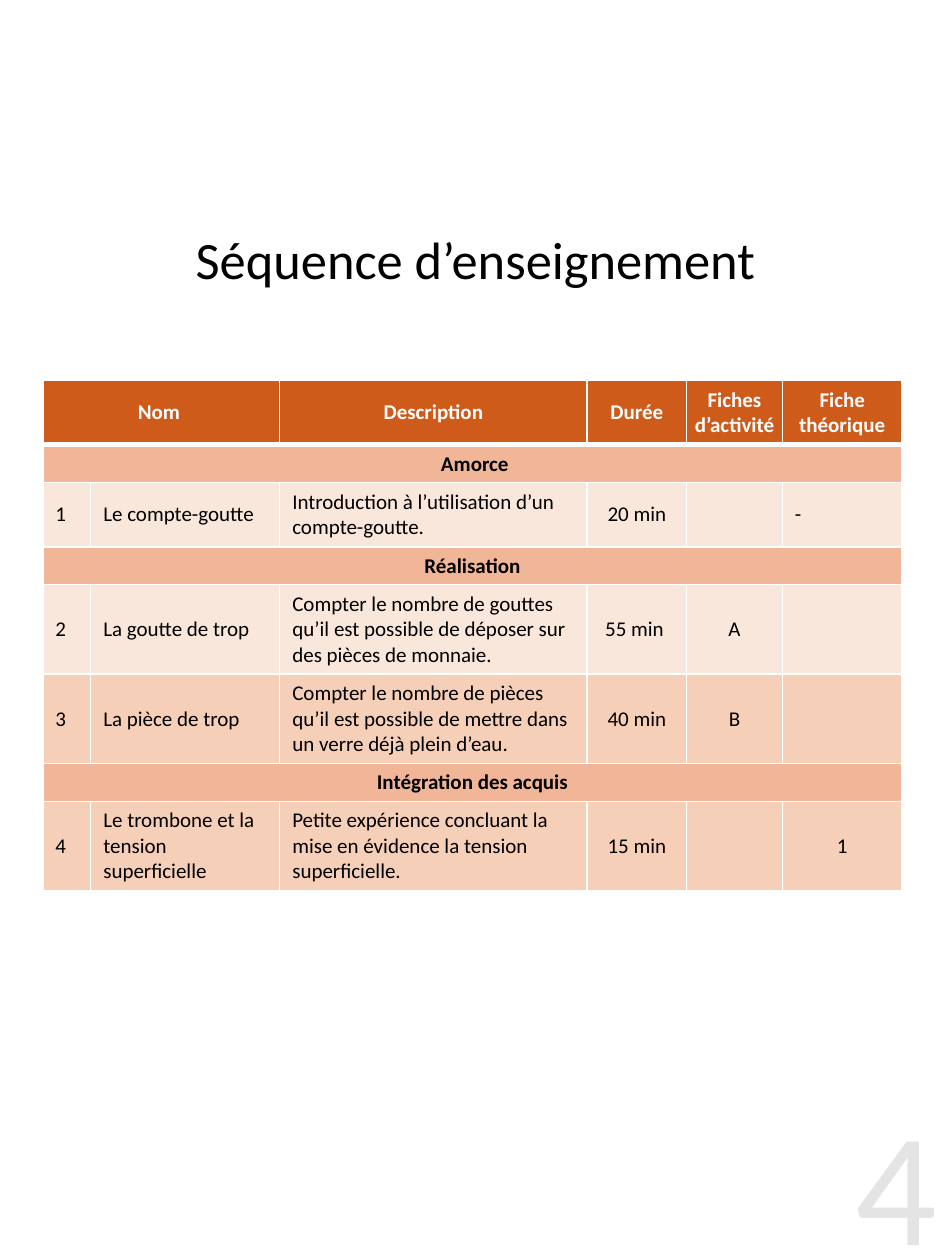
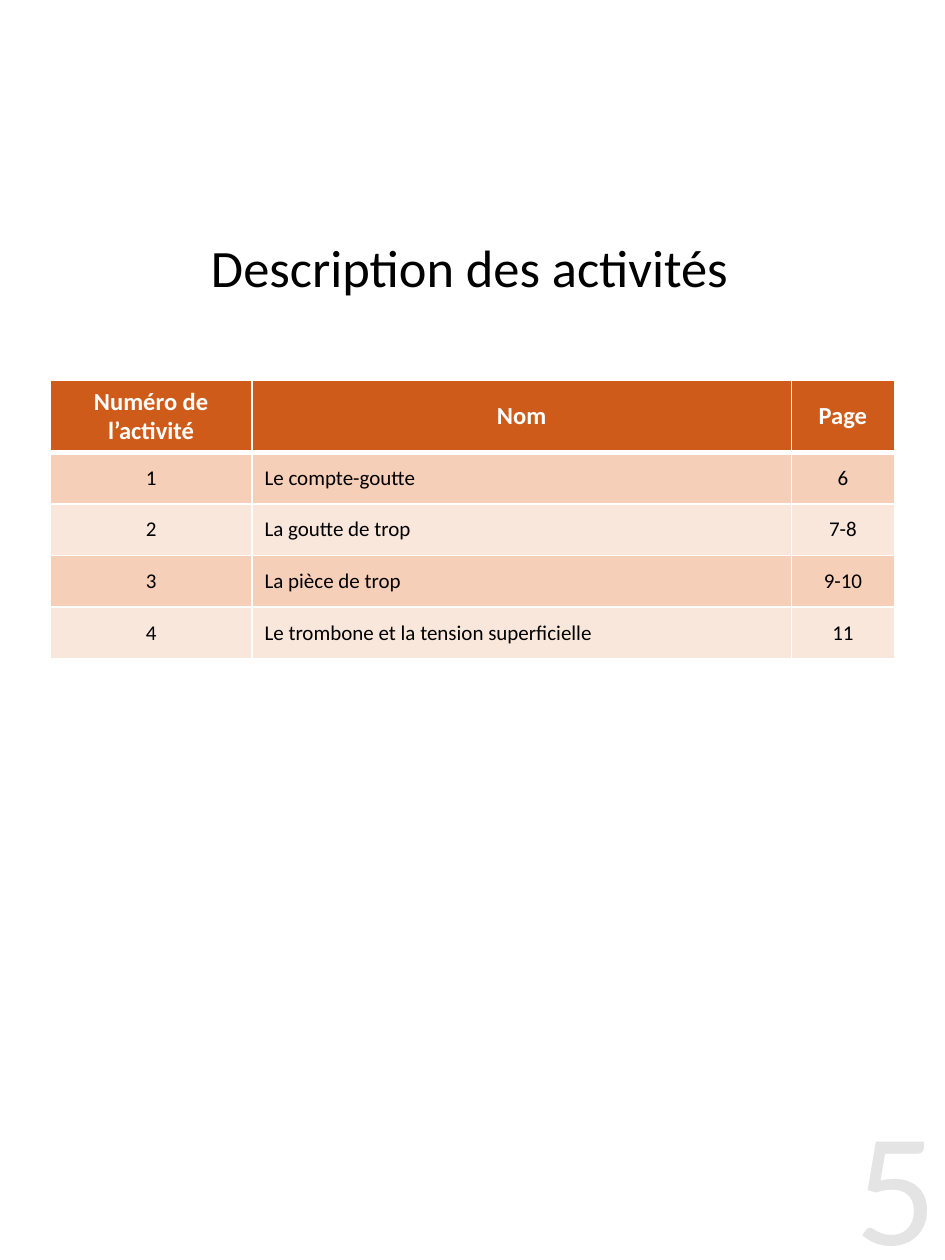
from dataclasses import dataclass
from itertools import takewhile

from lxml.etree import SubElement
from pptx import Presentation
from pptx.dml.color import RGBColor
from pptx.enum.text import MSO_ANCHOR as Anchor, PP_ALIGN as Align
from pptx.oxml.ns import qn
from pptx.util import Inches, Pt


@dataclass(frozen=True)
class Theme:
    font: str = "Calibri"
    text: str = "000000"
    white: str = "FFFFFF"
    header: str = "CF5B1B"
    section: str = "F1B697"
    band_dark: str = "F6CFB9"
    band_light: str = "FAE7DC"
    page_number: str = "E4E4E4"
    title_size: int = 30
    body_size: int = 12
    page_number_size: int = 92
    border: int = 1
    header_border: int = 3


THEME = Theme()
LEFT, CENTER = Align.LEFT, Align.CENTER
TABLE_TOP = 3.02
TIGHT_MARGIN = 0.04

# None continues the cell on its left.
SEQUENCE = {
    "title": "Séquence d’enseignement",
    "title_height": 0.83,
    "page": "4",
    "left": 0.34,
    "columns": [0.38, 1.5, 2.44, 0.79, 0.76, 0.95],
    "heights": [0.51, 0.3, 0.51, 0.3, 0.71, 0.71, 0.3, 0.71],
    "alignments": [LEFT, LEFT, LEFT, CENTER, CENTER, CENTER],
    "header_size": 12,
    "tight_headers": [3, 4, 5],
    "left_cells": [(2, 5)],
    "rows": [
        ["Nom ", None, "Description", "Durée", "Fiches d’activité", "Fiche théorique"],
        [" Amorce", None, None, None, None, None],
        ["1", "Le compte-goutte", "Introduction à l’utilisation d’un compte-goutte.",
         "20 min", "", "-"],
        ["Réalisation", None, None, None, None, None],
        ["2", "La goutte de trop",
         "Compter le nombre de gouttes qu’il est possible de déposer sur des pièces de monnaie.",
         "55 min ", "A", ""],
        ["3", "La pièce de trop",
         "Compter le nombre de pièces qu’il est possible de mettre dans un verre déjà plein d’eau.",
         "40 min", "B", ""],
        ["Intégration des acquis", None, None, None, None, None],
        ["4", "Le trombone et la tension superficielle",
         "Petite expérience concluant la mise en évidence la tension superficielle.",
         "15 min", "", "1"],
    ],
}

ACTIVITIES = {
    "title": "Description des activités ",
    "title_height": 0.95,
    "page": "5",
    "left": 0.4,
    "columns": [1.6, 4.28, 0.82],
    "heights": [0.57] + [0.41] * 4,
    "alignments": [CENTER, LEFT, CENTER],
    "header_size": 14,
    "tight_headers": [],
    "left_cells": [],
    "rows": [
        ["Numéro de\nl’activité", "Nom", "Page"],
        ["1", "Le compte-goutte", "6"],
        ["2", "La goutte de trop", "7-8"],
        ["3", "La pièce de trop", "9-10"],
        ["4", "Le trombone et la tension superficielle", "11"],
    ],
}


def write(frame, text, size, color=THEME.text, bold=False, alignment=CENTER):
    for index, line in enumerate(text.split("\n")):
        paragraph = frame.add_paragraph() if index else frame.paragraphs[0]
        paragraph.alignment = alignment
        if line:
            run = paragraph.add_run()
            run.text = line
            run.font.name = THEME.font
            run.font.size = Pt(size)
            run.font.bold = bold
            run.font.color.rgb = RGBColor.from_string(color)


def add_label(slide, box, text, size, color=THEME.text, anchor=Anchor.MIDDLE):
    frame = slide.shapes.add_textbox(*map(Inches, box)).text_frame
    frame.word_wrap = True
    frame.vertical_anchor = anchor
    frame.margin_left = frame.margin_right = frame.margin_top = frame.margin_bottom = 0
    write(frame, text, size, color)


def set_borders(cell, row_index):
    properties = cell._tc.get_or_add_tcPr()
    thick_side = {0: "lnB", 1: "lnT"}.get(row_index)
    for side in ("lnL", "lnR", "lnT", "lnB"):
        width = THEME.header_border if side == thick_side else THEME.border
        line = SubElement(properties, qn(f"a:{side}"), w=str(Pt(width)))
        fill = SubElement(line, qn("a:solidFill"))
        SubElement(fill, qn("a:srgbClr"), val=THEME.white)


def row_fill(row_index, is_section):
    if row_index == 0:
        return THEME.header
    if is_section:
        return THEME.section
    return THEME.band_dark if row_index % 2 else THEME.band_light


def fill_row(table, row_index, texts, content):
    is_header = row_index == 0
    is_section = all(text is None for text in texts[1:])
    color = RGBColor.from_string(row_fill(row_index, is_section))
    for column_index, text in enumerate(texts):
        cell = table.cell(row_index, column_index)
        set_borders(cell, row_index)
        cell.fill.solid()
        cell.fill.fore_color.rgb = color
        cell.vertical_anchor = Anchor.MIDDLE
        if text is None:
            continue
        span = len(list(takewhile(lambda item: item is None, texts[column_index + 1:])))
        if span:
            cell.merge(table.cell(row_index, column_index + span))
        if is_header and column_index in content["tight_headers"]:
            cell.margin_left = cell.margin_right = Inches(TIGHT_MARGIN)
        alignment = content["alignments"][column_index]
        if is_header or is_section:
            alignment = CENTER
        elif (row_index, column_index) in content["left_cells"]:
            alignment = LEFT
        write(cell.text_frame, text,
              content["header_size"] if is_header else THEME.body_size,
              THEME.white if is_header else THEME.text,
              is_header or is_section, alignment)


def add_table(slide, content):
    columns, heights = content["columns"], content["heights"]
    table = slide.shapes.add_table(
        len(heights), len(columns), Inches(content["left"]), Inches(TABLE_TOP),
        Inches(sum(columns)), Inches(sum(heights))).table
    table.horz_banding = False
    for column, width in zip(table.columns, columns):
        column.width = Inches(width)
    for row, height in zip(table.rows, heights):
        row.height = Inches(height)
    for row_index, texts in enumerate(content["rows"]):
        fill_row(table, row_index, texts, content)


def add_slide(presentation, content):
    slide = presentation.slides.add_slide(presentation.slide_layouts[6])
    add_label(slide, (0.16, 1.64, 7.23, content["title_height"]),
              content["title"], THEME.title_size)
    add_table(slide, content)
    add_label(slide, (6.72, 8.61, 0.78, 1.39), content["page"],
              THEME.page_number_size, THEME.page_number, Anchor.TOP)


def main():
    presentation = Presentation()
    presentation.slide_width = Inches(7.5)
    presentation.slide_height = Inches(10)
    for content in (SEQUENCE, ACTIVITIES):
        add_slide(presentation, content)
    presentation.save("out.pptx")


if __name__ == "__main__":
    main()
